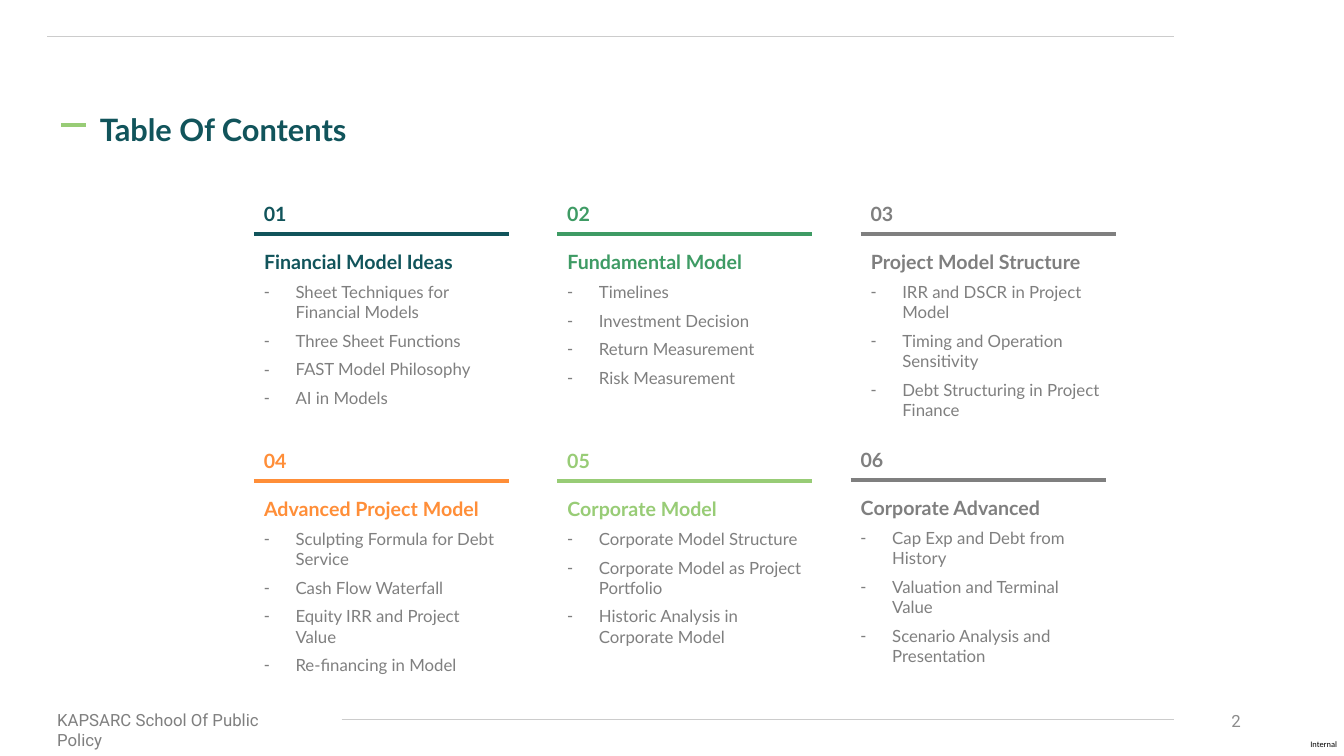
import copy

import pptx
import pptx.dml.color
import pptx.enum.shapes
import pptx.enum.text
import pptx.oxml
import pptx.oxml.ns
import pptx.util

Pt = pptx.util.Pt
RGB = pptx.dml.color.RGBColor
Align = pptx.enum.text.PP_ALIGN
Anchor = pptx.enum.text.MSO_ANCHOR

TEAL = RGB(0x11, 0x54, 0x5B)
GREEN = RGB(0x3E, 0x9B, 0x64)
LIME = RGB(0x98, 0xCC, 0x76)
ORANGE = RGB(0xFF, 0x8E, 0x38)
GREY = RGB(0x7F, 0x7F, 0x7F)
PAGE_GREY = RGB(0x8C, 0x8C, 0x8C)
RULE_GREY = RGB(0xCC, 0xCC, 0xCC)
BLACK = RGB(0, 0, 0)

CHAPTERS = [
    ("Financial Model Ideas", TEAL,
     ["Sheet Techniques for Financial Models", "Three Sheet Functions",
      "FAST Model Philosophy", "AI in Models"]),
    ("Fundamental Model", GREEN,
     ["Timelines", "Investment Decision", "Return Measurement",
      "Risk Measurement"]),
    ("Project Model Structure", GREY,
     ["IRR and DSCR in Project Model", "Timing and Operation Sensitivity",
      "Debt Structuring in Project Finance"]),
    ("Advanced Project Model", ORANGE,
     ["Sculpting Formula for Debt Service", "Cash Flow Waterfall",
      "Equity IRR and Project Value", "Re-financing in Model"]),
    ("Corporate Model", LIME,
     ["Corporate Model Structure", "Corporate Model as Project Portfolio",
      "Historic Analysis in Corporate Model"]),
    ("Corporate Advanced", GREY,
     ["Cap Exp and Debt from History", "Valuation and Terminal Value",
      "Scenario Analysis and Presentation"]),
]
COLUMNS = 3
CARD_LEFT, CARD_PITCH, CARD_WIDTH = 181.4, 216.7, 182.2
RULE_TOP, ROW_PITCH = 167, 176.4
LAST_CARD_SHIFT = (-7.2, -0.7)
INDENT = 22.5


def add_line(s, x1, x2, y, color, width):
    line = s.shapes.add_connector(pptx.enum.shapes.MSO_CONNECTOR.STRAIGHT,
                                  Pt(x1), Pt(y), Pt(x2), Pt(y))
    line.line.color.rgb = color
    line.line.width = Pt(width)
    line._element.spPr.append(pptx.oxml.parse_xml(
        "<a:effectLst %s/>" % pptx.oxml.ns.nsdecls("a")))


def add_run(p, text, font, size, color, bold=False):
    r = p.add_run()
    r.text = text
    r.font.name = font
    r.font.size = Pt(size)
    r.font.bold = bold
    r.font.color.rgb = color


def place(sp, left, top, width, height):
    sp.left, sp.top, sp.width, sp.height = map(Pt, (left, top, width, height))
    tf = sp.text_frame
    tf.word_wrap = True
    tf.auto_size = pptx.enum.text.MSO_AUTO_SIZE.NONE
    tf.vertical_anchor = Anchor.TOP
    return tf


def add_label(s, box, text, font, size, color, bold=False):
    tf = place(s.shapes.add_textbox(0, 0, 0, 0), *box)
    add_run(tf.paragraphs[0], text, font, size, color, bold)
    return tf


def set_bullet(p, char=None):
    indent = Pt(INDENT) if char else 0
    pPr = p._p.get_or_add_pPr()
    pPr.set("marL", str(indent))
    pPr.set("indent", str(-indent))
    tag = '<a:buChar %s char="{}"/>'.format(char) if char else "<a:buNone %s/>"
    pPr.append(pptx.oxml.parse_xml(tag % pptx.oxml.ns.nsdecls("a")))


def space(p, after, line=1.0):
    p.alignment = Align.LEFT
    p.space_before = Pt(0)
    p.space_after = Pt(after)
    p.line_spacing = line


def fill_list(tf, heading, color, items):
    p = tf.paragraphs[0]
    set_bullet(p)
    space(p, 6)
    add_run(p, heading, "Lato", 14, color, True)
    for item in items:
        p = tf.add_paragraph()
        set_bullet(p, "-")
        space(p, 6)
        add_run(p, item, "Lato", 12, GREY)


def add_card(s, body, index, heading, color, items):
    row, column = divmod(index, COLUMNS)
    x = CARD_LEFT + column * CARD_PITCH
    y = RULE_TOP + row * ROW_PITCH
    if index == len(CHAPTERS) - 1:
        x += LAST_CARD_SHIFT[0]
        y += LAST_CARD_SHIFT[1]
    add_label(s, (x, y - 26.6, CARD_WIDTH, 24.5), f"{index + 1:02d}",
              "Lato", 14, color, True)
    add_line(s, x, x + CARD_WIDTH, y, color, 3)
    tf = place(body, x, y + 7.9, CARD_WIDTH, 135)
    fill_list(tf, heading, color, items)


def add_list_placeholders(layout, count):
    first = layout.placeholders[1]._element
    for n in range(1, count):
        sp = copy.deepcopy(first)
        sp.ph.set("idx", str(20 + n))
        sp.nvSpPr.cNvPr.set("id", str(20 + n))
        sp.nvSpPr.cNvPr.set("name", f"Chapter List {n + 1}")
        layout.shapes._spTree.append(sp)


def add_title(s, text):
    tf = place(s.shapes.title, 64.1, 67.7, 237.6, 38.2)
    p = tf.paragraphs[0]
    space(p, 6, 1.3)
    add_run(p, text, "Lato", 22, TEAL, True)
    add_line(s, 43.9, 61.2, 89.3, LIME, 3)


def add_frame(s):
    add_line(s, 33.8, 838.8, 25.9, RULE_GREY, 1)
    add_line(s, 244.1, 838.8, 514.1, RULE_GREY, 1)
    add_label(s, (33.8, 503.3, 187.2, 21.6),
              "KAPSARC School Of Public Policy", "Roboto", 12, GREY)
    page = add_label(s, (838.8, 500.4, 54.7, 28.8), "2", "Roboto", 12,
                     PAGE_GREY)
    page.vertical_anchor = Anchor.MIDDLE
    page.paragraphs[0].alignment = Align.RIGHT
    mark = add_label(s, (936, 527.8, 22, 7.2), "Internal", "Calibri", 6, BLACK)
    mark.margin_left = mark.margin_right = 0
    mark.margin_top = mark.margin_bottom = 0


def main():
    prs = pptx.Presentation()
    prs.slide_width, prs.slide_height = Pt(960), Pt(540)
    layout = prs.slide_layouts[1]
    add_list_placeholders(layout, len(CHAPTERS))
    s = prs.slides.add_slide(layout)
    bodies = [sp for sp in s.placeholders if sp.placeholder_format.idx > 0]
    add_frame(s)
    add_title(s, "Table Of Contents")
    for index, (body, chapter) in enumerate(zip(bodies, CHAPTERS)):
        add_card(s, body, index, *chapter)
    prs.save("out.pptx")


if __name__ == "__main__":
    main()
